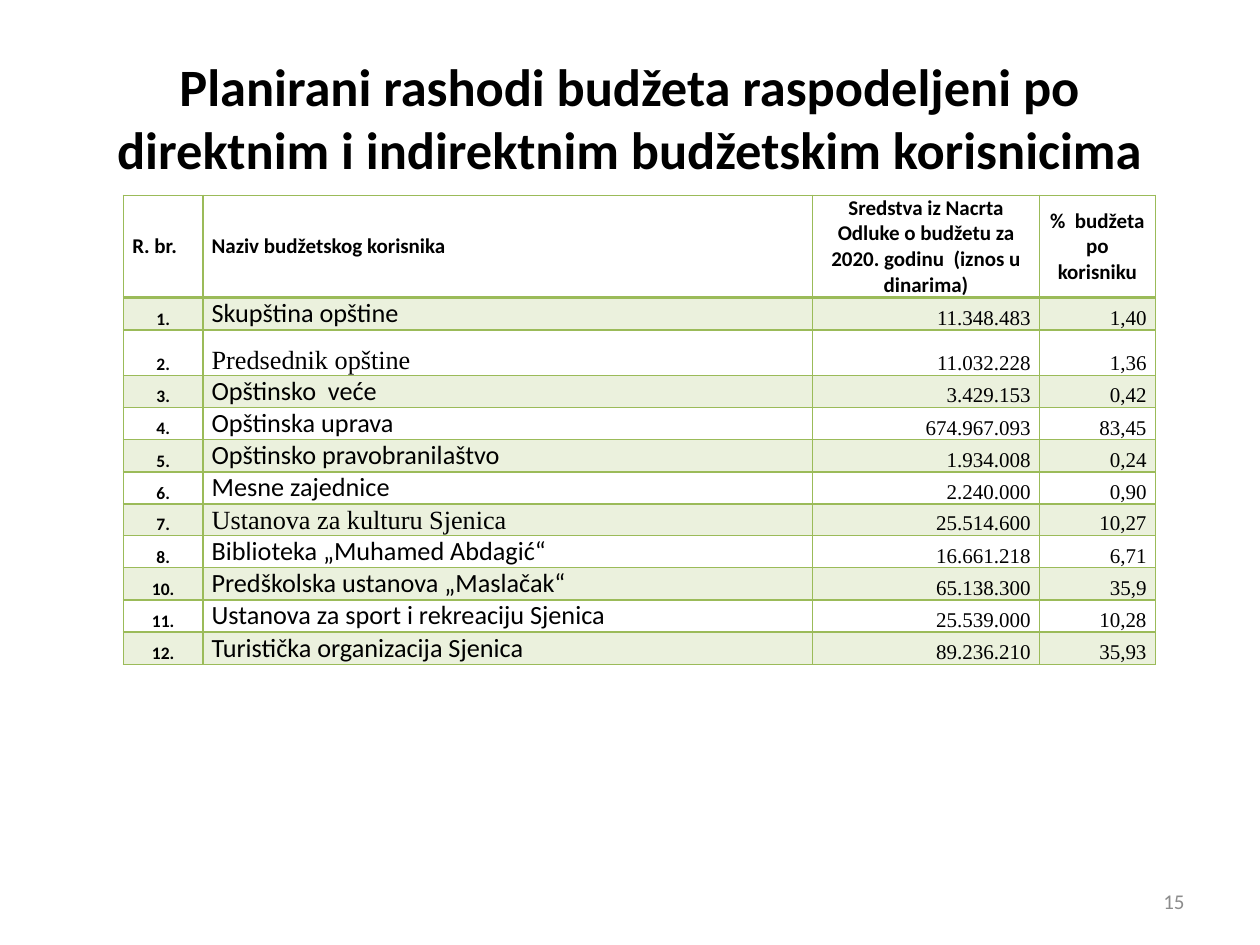
from dataclasses import dataclass
from lxml.etree import SubElement
from pptx import Presentation
from pptx.dml.color import RGBColor
from pptx.enum.text import MSO_ANCHOR, PP_ALIGN
from pptx.oxml.ns import qn
from pptx.util import Inches, Pt


@dataclass(frozen=True)
class Theme:
    """Colours, fonts and type sizes."""
    ink: str = "000000"
    grey: str = "8C8C8C"
    green: str = "9BBB59"
    tint: int = 20
    sans: str = "Calibri"
    serif: str = "Times New Roman"
    title: int = 30
    name: int = 15
    label: int = 12
    index: int = 10


class Deck:
    """Holds the theme and the current slide."""

    def __init__(self, theme):
        """Open a deck with one title-only slide."""
        self.theme = theme
        self.show = Presentation()
        self.show.slide_width, self.show.slide_height = Inches(10), Inches(7.5)
        self.slide = self.show.slides.add_slide(self.show.slide_layouts[5])

    def text(self, frame, words, size, align, bold=False, font=None, color=None):
        """Add one styled run to the first paragraph of a frame."""
        para = frame.paragraphs[0]
        para.alignment = align
        run = para.add_run()
        run.text = words
        run.font.size, run.font.bold = Pt(size), bold
        run.font.name = font or self.theme.sans
        run.font.color.rgb = RGBColor.from_string(color or self.theme.ink)

    def title(self, words, box):
        """Fill and place the title placeholder."""
        shape = self.slide.shapes.title
        shape.left, shape.top, shape.width, shape.height = map(Inches, box)
        shape.text_frame.vertical_anchor = MSO_ANCHOR.MIDDLE
        self.text(shape.text_frame, words, self.theme.title, PP_ALIGN.CENTER, True)

    def number(self, words, box):
        """Add the page number."""
        frame = self.slide.shapes.add_textbox(*map(Inches, box)).text_frame
        frame.word_wrap = True
        frame.vertical_anchor = MSO_ANCHOR.MIDDLE
        self.text(frame, words, self.theme.label, PP_ALIGN.RIGHT, color=self.theme.grey)

    def grid(self, left, top, cols, rows):
        """Add an empty table with given column widths and row heights."""
        table = self.slide.shapes.add_table(
            len(rows), len(cols), Inches(left), Inches(top),
            Inches(sum(cols)), Inches(sum(rows))).table
        table.first_row = table.horz_banding = False
        for col, width in zip(table.columns, cols):
            col.width = Inches(width)
        for row, height in zip(table.rows, rows):
            row.height = Inches(height)
        return table

    def edge(self, cell, sides):
        """Draw cell borders from a map of side to width."""
        props = cell._tc.get_or_add_tcPr()
        for side, width in sides.items():
            line = SubElement(props, qn(f"a:ln{side}"), w=str(Pt(width)))
            fill = SubElement(line, qn("a:solidFill"))
            SubElement(fill, qn("a:srgbClr"), val=self.theme.green)

    def shade(self, cell, tinted):
        """Give a cell a pale tint or no fill."""
        if not tinted:
            cell.fill.background()
            return
        cell.fill.solid()
        cell.fill.fore_color.rgb = RGBColor.from_string(self.theme.green)
        color = cell._tc.tcPr.find(f"{qn('a:solidFill')}/{qn('a:srgbClr')}")
        SubElement(color, qn("a:alpha"), val=str(self.theme.tint * 1000))

    def cell(self, table, row, col, words, **style):
        """Format and fill one table cell."""
        cell = table.cell(row, col)
        cell.margin_left = cell.margin_right = Inches(0.07)
        cell.margin_top = cell.margin_bottom = 0
        cell.vertical_anchor = MSO_ANCHOR.BOTTOM if row else MSO_ANCHOR.MIDDLE
        self.edge(cell, {"L": 1, "R": 1, "T": 1 if row != 1 else 2, "B": 1 if row else 2})
        self.shade(cell, row % 2)
        self.text(cell.text_frame, words, **style)


HEADS = ["R. br.", "Naziv budžetskog korisnika",
         "Sredstva iz Nacrta Odluke o budžetu za 2020. godinu  (iznos u dinarima)",
         "%  budžeta po korisniku"]
USERS = [
    ("1.", "Skupština opštine", "11.348.483", "1,40"),
    ("2.", "Predsednik opštine", "11.032.228", "1,36"),
    ("3.", "Opštinsko  veće", "3.429.153", "0,42"),
    ("4.", "Opštinska uprava", "674.967.093", "83,45"),
    ("5.", "Opštinsko pravobranilaštvo", "1.934.008", "0,24"),
    ("6.", "Mesne zajednice", "2.240.000", "0,90"),
    ("7.", "Ustanova za kulturu Sjenica", "25.514.600", "10,27"),
    ("8.", "Biblioteka „Muhamed Abdagić“", "16.661.218", "6,71"),
    ("10.", "Predškolska ustanova „Maslačak“", "65.138.300", "35,9"),
    ("11.", "Ustanova za sport i rekreaciju Sjenica", "25.539.000", "10,28"),
    ("12.", "Turistička organizacija Sjenica", "89.236.210", "35,93"),
]
SERIF = {"2.", "7."}


def main():
    """Build the budget slide."""
    theme = Theme()
    deck = Deck(theme)
    deck.title("Planirani rashodi budžeta raspodeljeni po direktnim i "
               "indirektnim budžetskim korisnicima", (0.5, 0.3, 9, 1.25))
    table = deck.grid(0.98, 1.55, [0.63, 4.84, 1.8, 0.92],
                      [0.81, 0.25, 0.36] + [0.25] * (len(USERS) - 2))
    for col, head in enumerate(HEADS):
        align = PP_ALIGN.LEFT if col < 2 else PP_ALIGN.CENTER
        deck.cell(table, 0, col, head, size=theme.label, align=align, bold=True)
    for row, (index, name, *sums) in enumerate(USERS, 1):
        deck.cell(table, row, 0, index, size=theme.index, align=PP_ALIGN.CENTER, bold=True)
        deck.cell(table, row, 1, name, size=theme.name, align=PP_ALIGN.LEFT,
                  font=theme.serif if index in SERIF else theme.sans)
        for col, value in enumerate(sums, 2):
            deck.cell(table, row, col, value, size=theme.label,
                      align=PP_ALIGN.RIGHT, font=theme.serif)
    deck.number("15", (7.17, 6.95, 2.33, 0.4))
    deck.show.save("out.pptx")


if __name__ == "__main__":
    main()
